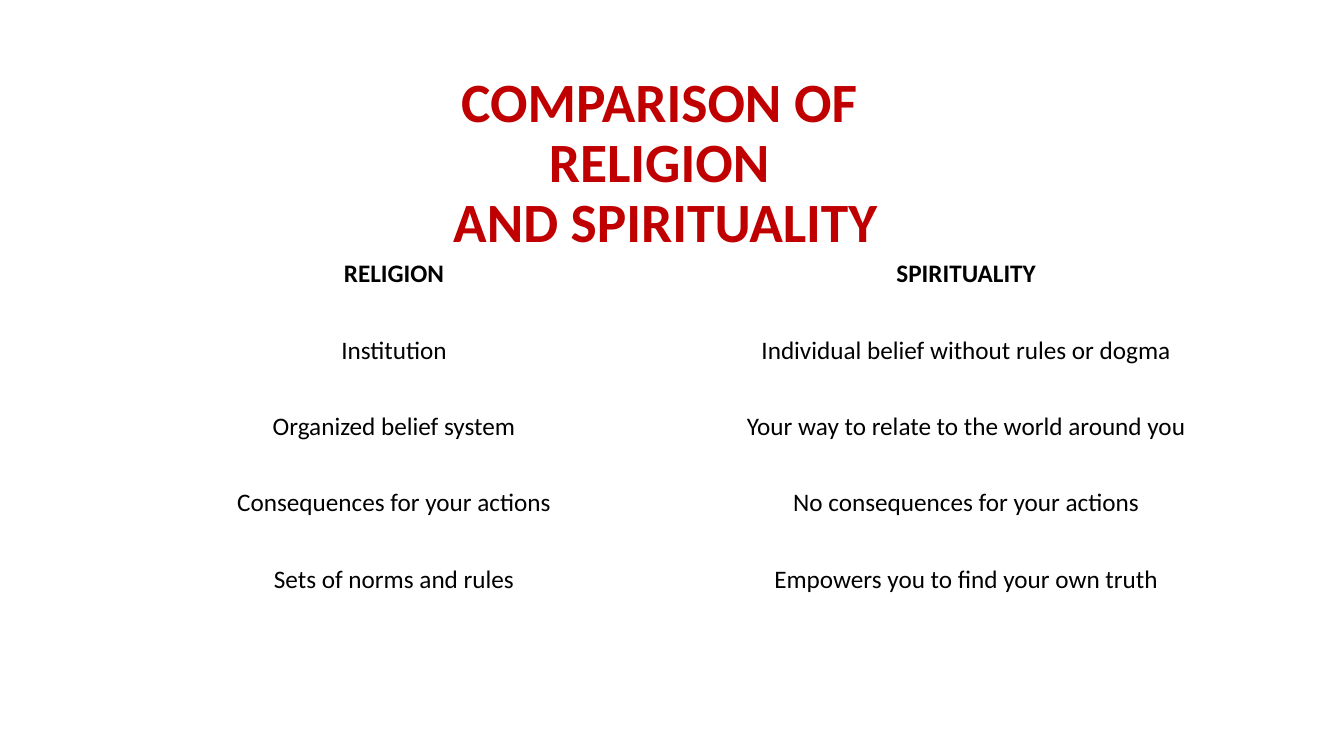
import pptx
import pptx.util
import pptx.dml.color
import pptx.enum.text
import pptx.oxml.ns
import lxml.etree
from dataclasses import dataclass

Inches = pptx.util.Inches
Color = pptx.dml.color.RGBColor
Anchor = pptx.enum.text.MSO_ANCHOR


@dataclass(frozen=True)
class Theme:
    font: str = "Calibri"
    red: str = "C00000"
    black: str = "000000"
    head: float = 39.6
    body: float = 18


THEME = Theme()
TITLE = "COMPARISON OF \vRELIGION \vAND SPIRITUALITY"
ROWS = [
    ("RELIGION", "SPIRITUALITY"),
    ("Institution", "Individual belief without rules or dogma"),
    ("Organized belief system", "Your way to relate to the world around you"),
    ("Consequences for your actions", "No consequences for your actions"),
    ("Sets of norms and rules", "Empowers you to find your own truth"),
]


def put_text(frame, text, size=THEME.body, color=THEME.black, bold=False, space=1.0):
    para = frame.paragraphs[0]
    para.text = text
    para.alignment = pptx.enum.text.PP_ALIGN.CENTER
    para.line_spacing = space
    for run in para.runs:
        font = run.font
        font.name, font.size, font.bold = THEME.font, pptx.util.Pt(size), bold
        font.color.rgb = Color.from_string(color)


def add_title(slide, left, top, width, height):
    title = slide.shapes.title
    title.left, title.top = Inches(left), Inches(top)
    title.width, title.height = Inches(width), Inches(height)
    frame = title.text_frame
    frame.word_wrap = True
    frame.auto_size = pptx.enum.text.MSO_AUTO_SIZE.NONE
    frame.vertical_anchor = Anchor.MIDDLE
    # The deep lower margin lifts the heading clear of the table
    frame.margin_bottom = Inches(0.7)
    put_text(frame, TITLE, size=THEME.head, color=THEME.red, bold=True, space=0.9)


def clear_cell(cell):
    # Borders come before the fill in the cell properties
    props = cell._tc.get_or_add_tcPr()
    qn = pptx.oxml.ns.qn
    for side in "LRTB":
        line = lxml.etree.SubElement(props, qn(f"a:ln{side}"), w="0")
        lxml.etree.SubElement(line, qn("a:noFill"))
    cell.fill.background()


def add_grid(slide, left, top, width, height):
    table = slide.shapes.add_table(
        len(ROWS), len(ROWS[0]),
        Inches(left), Inches(top), Inches(width), Inches(height)).table
    table.first_row = table.horz_banding = False
    for i, row in enumerate(ROWS):
        for j, text in enumerate(row):
            cell = table.cell(i, j)
            clear_cell(cell)
            cell.vertical_anchor = Anchor.MIDDLE
            cell.margin_left = cell.margin_right = 0
            cell.margin_top = cell.margin_bottom = 0
            put_text(cell.text_frame, text, bold=i == 0)


def main():
    deck = pptx.Presentation()
    deck.slide_width, deck.slide_height = Inches(13.33), Inches(7.5)
    slide = deck.slides.add_slide(deck.slide_layouts[5])
    # Heading, then the two-column comparison
    add_title(slide, 0.28, 1.23, 12.64, 1.45)
    add_grid(slide, 1.07, 2.34, 11.35, 3.79)
    deck.save("out.pptx")


if __name__ == "__main__":
    main()
